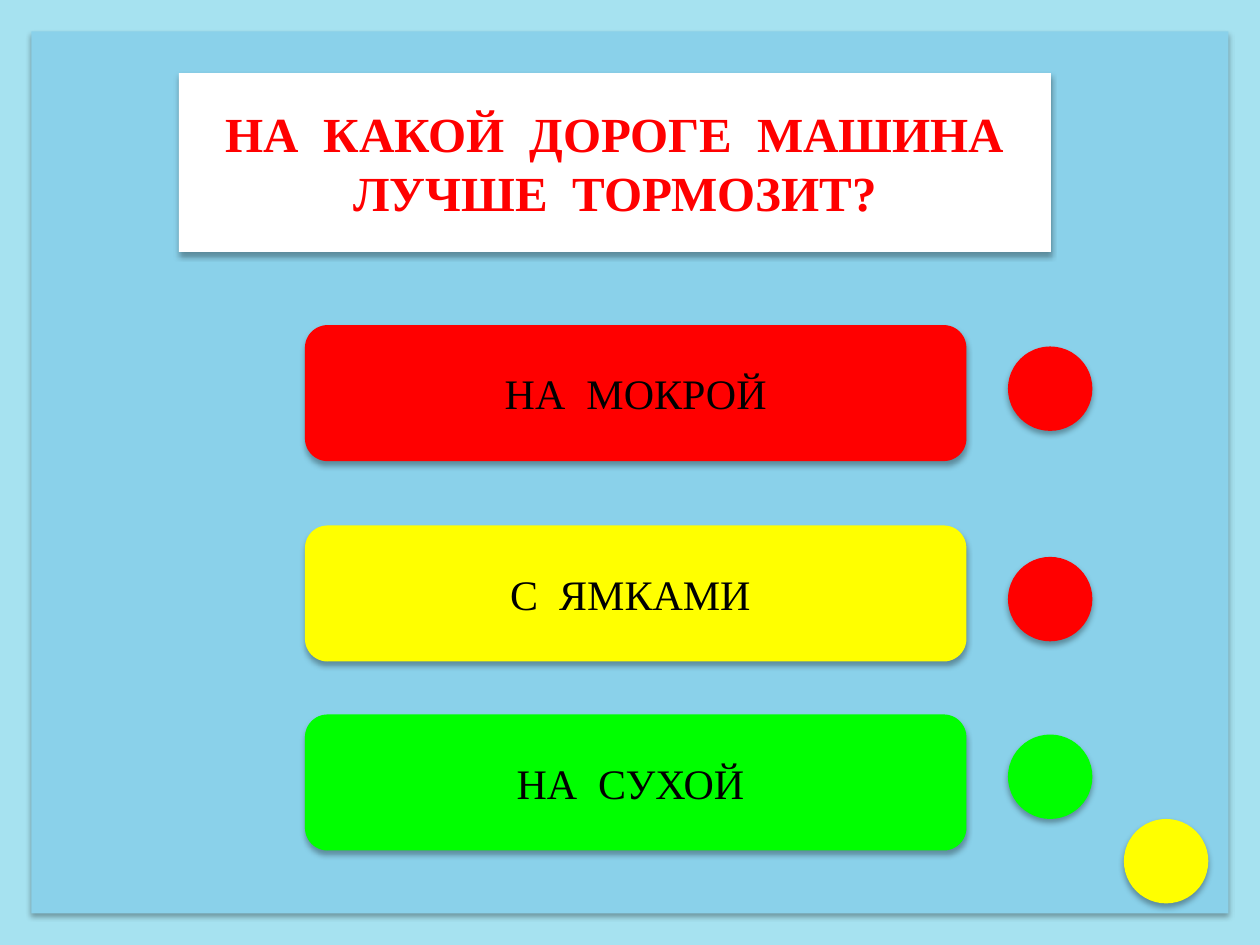
"""Quiz slide: a question, three coloured answers and their marker circles."""
from dataclasses import dataclass

from lxml.etree import SubElement
from pptx import Presentation
from pptx.dml.color import RGBColor
from pptx.enum.shapes import MSO_SHAPE as Preset
from pptx.enum.text import MSO_ANCHOR as Anchor, MSO_AUTO_SIZE as AutoSize, PP_ALIGN as Align
from pptx.oxml.ns import qn
from pptx.shapes.autoshape import Shape
from pptx.slide import Slide
from pptx.util import Inches, Pt

COLORS = {
    "frame": "A6E2F0",
    "panel": "8AD1EA",
    "white": "FFFFFF",
    "black": "000000",
    "red": "FF0000",
    "yellow": "FFFF00",
    "green": "00FF00",
}
FONT = "Times New Roman"
CIRCLE_SIZE = 0.67


@dataclass(frozen=True)
class Answer:
    text: str
    color: str
    top: float
    marker_color: str
    marker_top: float


ANSWERS = [
    Answer("НА  МОКРОЙ", "red", 2.58, "red", 2.75),
    Answer("С  ЯМКАМИ ", "yellow", 4.17, "red", 4.42),
    Answer("НА  СУХОЙ ", "green", 5.67, "green", 5.83),
]


def rgb(color: str) -> RGBColor:
    return RGBColor.from_string(COLORS[color])


def style_surface(shape: Shape, color: str) -> None:
    shape.fill.solid()
    shape.fill.fore_color.rgb = rgb(color)
    shape.line.fill.background()
    shape.shadow.inherit = False
    effects = shape.element.spPr.find(qn("a:effectLst"))
    shadow = SubElement(
        effects, qn("a:outerShdw"), blurRad=str(Pt(3.5)), dist=str(Pt(2.2)),
        dir="5400000", rotWithShape="0",
    )
    shade = SubElement(shadow, qn("a:srgbClr"), val=COLORS["black"])
    SubElement(shade, qn("a:alpha"), val="32000")


def add_surface(slide: Slide, preset: Preset, left: float, top: float,
                width: float, height: float, color: str) -> Shape:
    surface = slide.shapes.add_shape(
        preset, Inches(left), Inches(top), Inches(width), Inches(height))
    style_surface(surface, color)
    return surface


def add_circle(slide: Slide, left: float, top: float, color: str) -> None:
    add_surface(slide, Preset.OVAL, left, top, CIRCLE_SIZE, CIRCLE_SIZE, color)


def write_text(shape: Shape, text: str, size: int, color: str, bold: bool = False) -> None:
    frame = shape.text_frame
    frame.word_wrap = True
    frame.auto_size = AutoSize.NONE
    frame.vertical_anchor = Anchor.MIDDLE
    paragraph = frame.paragraphs[0]
    paragraph.alignment = Align.CENTER
    run = paragraph.add_run()
    run.text = text
    run.font.name = FONT
    run.font.size = Pt(size)
    run.font.bold = bold
    run.font.color.rgb = rgb(color)


def place_question(slide: Slide, text: str) -> None:
    question = slide.shapes.title
    question.left, question.top = Inches(1.42), Inches(0.58)
    question.width, question.height = Inches(6.92), Inches(1.42)
    style_surface(question, "white")
    write_text(question, text, 28, "red", bold=True)
    slide.shapes.element.append(question.element)


def add_answer(slide: Slide, answer: Answer) -> None:
    button = add_surface(
        slide, Preset.ROUNDED_RECTANGLE, 2.42, answer.top, 5.25, 1.08, answer.color)
    write_text(button, answer.text, 24, "black")
    add_circle(slide, 8, answer.marker_top, answer.marker_color)


def main() -> None:
    deck = Presentation()
    deck.slide_width, deck.slide_height = Inches(10), Inches(7.5)
    slide = deck.slides.add_slide(deck.slide_layouts[5])
    add_surface(slide, Preset.RECTANGLE, 0, 0, 10, 7.5, "frame")
    add_surface(slide, Preset.RECTANGLE, 0.25, 0.25, 9.5, 7, "panel")
    place_question(slide, "НА  КАКОЙ  ДОРОГЕ  МАШИНА ЛУЧШЕ  ТОРМОЗИТ?")
    for answer in ANSWERS:
        add_answer(slide, answer)
    add_circle(slide, 8.92, 6.5, "yellow")
    deck.save("out.pptx")


if __name__ == "__main__":
    main()
